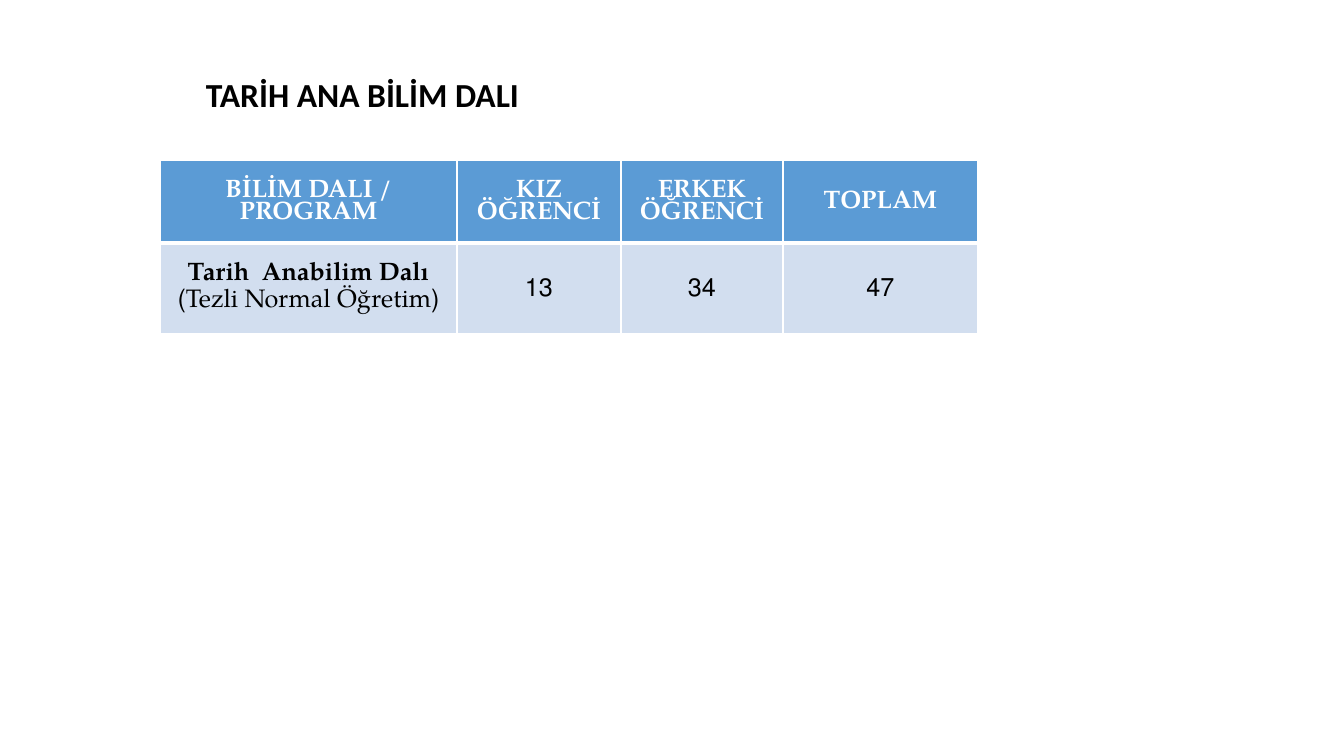
from dataclasses import dataclass

from lxml.etree import SubElement
from pptx import Presentation
from pptx.dml.color import RGBColor
from pptx.enum.text import MSO_ANCHOR, PP_ALIGN
from pptx.oxml.ns import qn
from pptx.util import Emu, Pt


@dataclass(frozen=True)
class Theme:
    ink: str = "000000"
    paper: str = "FFFFFF"
    header: str = "5B9BD5"
    body: str = "D2DEEF"
    title_font: str = "Calibri"
    table_font: str = "TeX Gyre Pagella"
    title_size: int = 24
    table_size: int = 18


def px(length):
    return Emu(round(length * 914400 / 100.8))


def style(paragraph, font, size, color, bold):
    paragraph.font.size = Pt(size)
    for span in paragraph.runs:
        span.font.name = font
        span.font.size = Pt(size)
        span.font.bold = bold
        span.font.color.rgb = RGBColor.from_string(color)


theme = Theme()
deck = Presentation()
deck.slide_width, deck.slide_height = px(1344), px(756)
page = deck.slides.add_slide(deck.slide_layouts[6])

title = page.shapes.add_textbox(px(196), px(69), px(746), px(92))
title.text_frame.word_wrap = True
title.text_frame.text = "TARİH ANA BİLİM DALI"
style(title.text_frame.paragraphs[0], theme.title_font, theme.title_size, theme.ink, True)

column_widths = [297, 164, 162, 195]
row_heights = [83, 91]
records = [
    ["BİLİM DALI / PROGRAM", "KIZ ÖĞRENCİ", "ERKEK ÖĞRENCİ", "TOPLAM"],
    ["Tarih  Anabilim Dalı\n(Tezli Normal Öğretim)", "13", "34", "47"],
]
table = page.shapes.add_table(
    len(records), len(column_widths), px(160), px(160),
    px(sum(column_widths)), px(sum(row_heights)),
).table
for column, width in zip(table.columns, column_widths):
    column.width = px(width)
for row, height in zip(table.rows, row_heights):
    row.height = px(height)

for row_index, record in enumerate(records):
    is_header = row_index == 0
    for column_index, text in enumerate(record):
        cell = table.cell(row_index, column_index)
        cell.text_frame.text = text
        cell.vertical_anchor = MSO_ANCHOR.MIDDLE
        cell.margin_left = cell.margin_right = px(15)
        cell.margin_top = cell.margin_bottom = px(5)
        for line_index, paragraph in enumerate(cell.text_frame.paragraphs):
            paragraph.alignment = PP_ALIGN.CENTER
            if not is_header or column_index > 0:
                paragraph._p.get_or_add_pPr().set("rtl", "1")
            if is_header:
                paragraph.line_spacing = 0.9
            bold = is_header or (column_index == 0 and line_index == 0)
            color = theme.paper if is_header else theme.ink
            style(paragraph, theme.table_font, theme.table_size, color, bold)

        properties = cell._tc.get_or_add_tcPr()
        for side in ("lnL", "lnR", "lnT", "lnB"):
            divider = (side == "lnB" and is_header) or (side == "lnT" and not is_header)
            border = SubElement(properties, qn(f"a:{side}"), w=str(Pt(3 if divider else 1)))
            paint = SubElement(border, qn("a:solidFill"))
            SubElement(paint, qn("a:srgbClr"), val=theme.paper)
        cell.fill.solid()
        cell.fill.fore_color.rgb = RGBColor.from_string(theme.header if is_header else theme.body)

deck.save("out.pptx")
